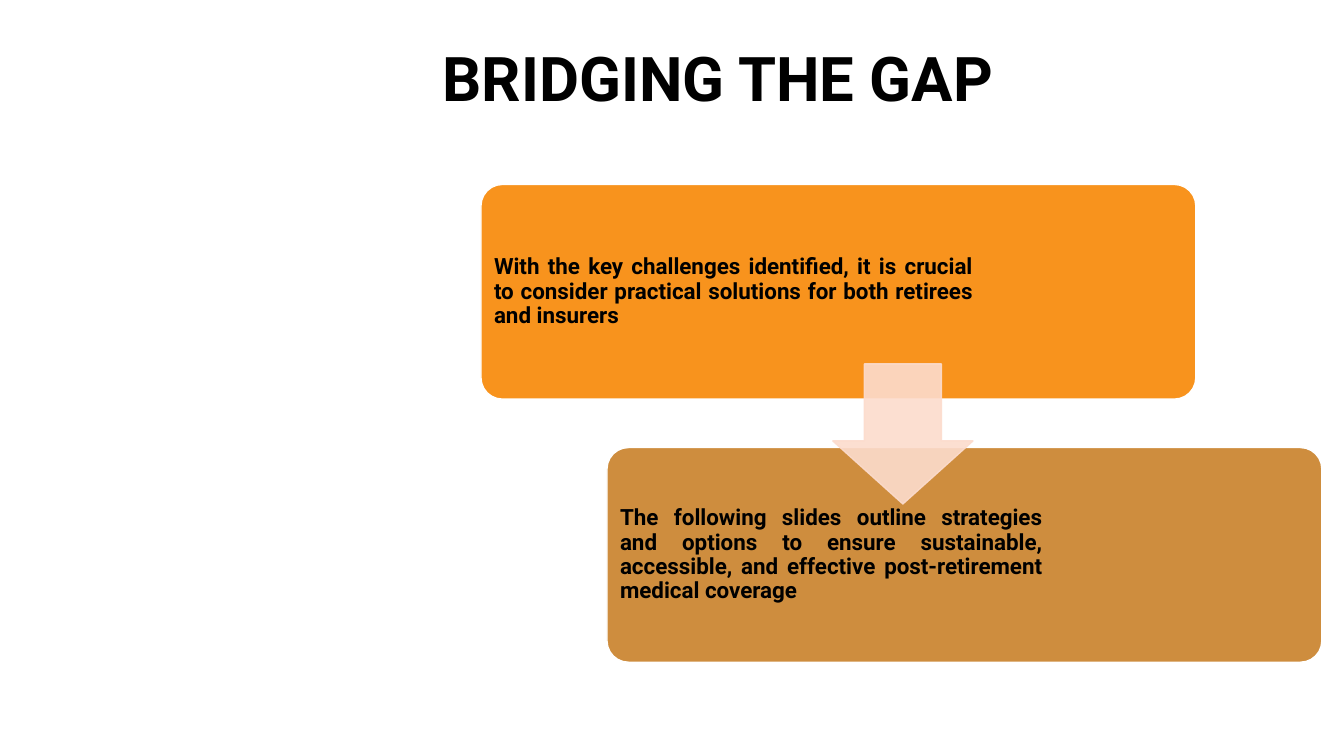
from dataclasses import dataclass

from lxml.etree import SubElement
from pptx import Presentation
from pptx.dml.color import RGBColor
from pptx.enum.shapes import MSO_SHAPE
from pptx.enum.text import MSO_ANCHOR, MSO_AUTO_SIZE, PP_ALIGN
from pptx.oxml.ns import qn
from pptx.shapes.autoshape import Shape
from pptx.slide import Slide
from pptx.text.text import TextFrame
from pptx.util import Inches, Pt


@dataclass(frozen=True)
class Theme:
    font: str = "Roboto"
    ink: str = "000000"
    edge: str = "FFFFFF"
    orange: str = "F8931D"
    bronze: str = "CE8D3E"
    blush: str = "FCDCCD"
    title: int = 44
    body: int = 16


@dataclass(frozen=True)
class Card:
    left: float
    top: float
    measure: float  # width of the text column
    fill: str
    text: str


THEME = Theme()
WIDTH, HEIGHT = 7.09, 2.13
INSET, MARGIN = 0.06, 0.07
OPACITY = 90

CARDS = (
    Card(4.77, 1.83, 4.89, THEME.orange,
         "With the key challenges identified, it is crucial to consider "
         "practical solutions for both retirees and insurers"),
    Card(6.02, 4.44, 4.33, THEME.bronze,
         "The following slides outline strategies and options to ensure "
         "sustainable, accessible, and effective post-retirement medical coverage"),
)


def write(frame: TextFrame, text: str, size: int, align: PP_ALIGN,
          anchor: MSO_ANCHOR) -> None:
    frame.word_wrap = True
    frame.auto_size = MSO_AUTO_SIZE.NONE
    frame.vertical_anchor = anchor
    frame.text = text
    para = frame.paragraphs[0]
    para.alignment = align
    para.line_spacing = 0.9
    para.space_before = Pt(0)
    para.font.name = THEME.font
    para.font.size = Pt(size)
    para.font.bold = True
    para.font.color.rgb = RGBColor.from_string(THEME.ink)


def paint(shape: Shape, fill: str, line: str) -> None:
    shape.shadow.inherit = False
    shape.fill.solid()
    shape.fill.fore_color.rgb = RGBColor.from_string(fill)
    shape.line.color.rgb = RGBColor.from_string(line)
    shape.line.width = Pt(1)


def fade(shape: Shape, percent: int) -> None:
    """Set the opacity of both fill and outline."""
    for color in shape.element.spPr.iter(qn("a:srgbClr")):
        SubElement(color, qn("a:alpha"), val=str(percent * 1000))


def add_title(slide: Slide, text: str) -> None:
    title = slide.shapes.title
    title.left, title.top = Inches(4.29), Inches(0.26)
    title.width, title.height = Inches(8.78), Inches(0.93)
    write(title.text_frame, text, THEME.title, PP_ALIGN.LEFT, MSO_ANCHOR.BOTTOM)


def add_card(slide: Slide, card: Card) -> None:
    panel = slide.shapes.add_shape(
        MSO_SHAPE.ROUNDED_RECTANGLE, Inches(card.left), Inches(card.top),
        Inches(WIDTH), Inches(HEIGHT))
    panel.adjustments[0] = 0.1
    paint(panel, card.fill, THEME.edge)

    box = slide.shapes.add_textbox(
        Inches(card.left + INSET), Inches(card.top + INSET),
        Inches(card.measure), Inches(HEIGHT - 2 * INSET))
    frame = box.text_frame
    frame.margin_left = frame.margin_right = Inches(MARGIN)
    frame.margin_top = frame.margin_bottom = Inches(MARGIN)
    write(frame, card.text, THEME.body, PP_ALIGN.JUSTIFY, MSO_ANCHOR.MIDDLE)


def add_arrow(slide: Slide) -> None:
    arrow = slide.shapes.add_shape(
        MSO_SHAPE.DOWN_ARROW, Inches(8.26), Inches(3.61),
        Inches(1.39), Inches(1.39))
    arrow.adjustments[0] = 0.55
    arrow.adjustments[1] = 0.45
    paint(arrow, THEME.blush, THEME.blush)
    fade(arrow, OPACITY)


def main() -> None:
    deck = Presentation()
    deck.slide_width, deck.slide_height = Inches(13.33), Inches(7.5)
    slide = deck.slides.add_slide(deck.slide_layouts.get_by_name("Title Only"))
    add_title(slide, "BRIDGING THE GAP")
    for card in CARDS:
        add_card(slide, card)
    add_arrow(slide)
    deck.save("out.pptx")


if __name__ == "__main__":
    main()
